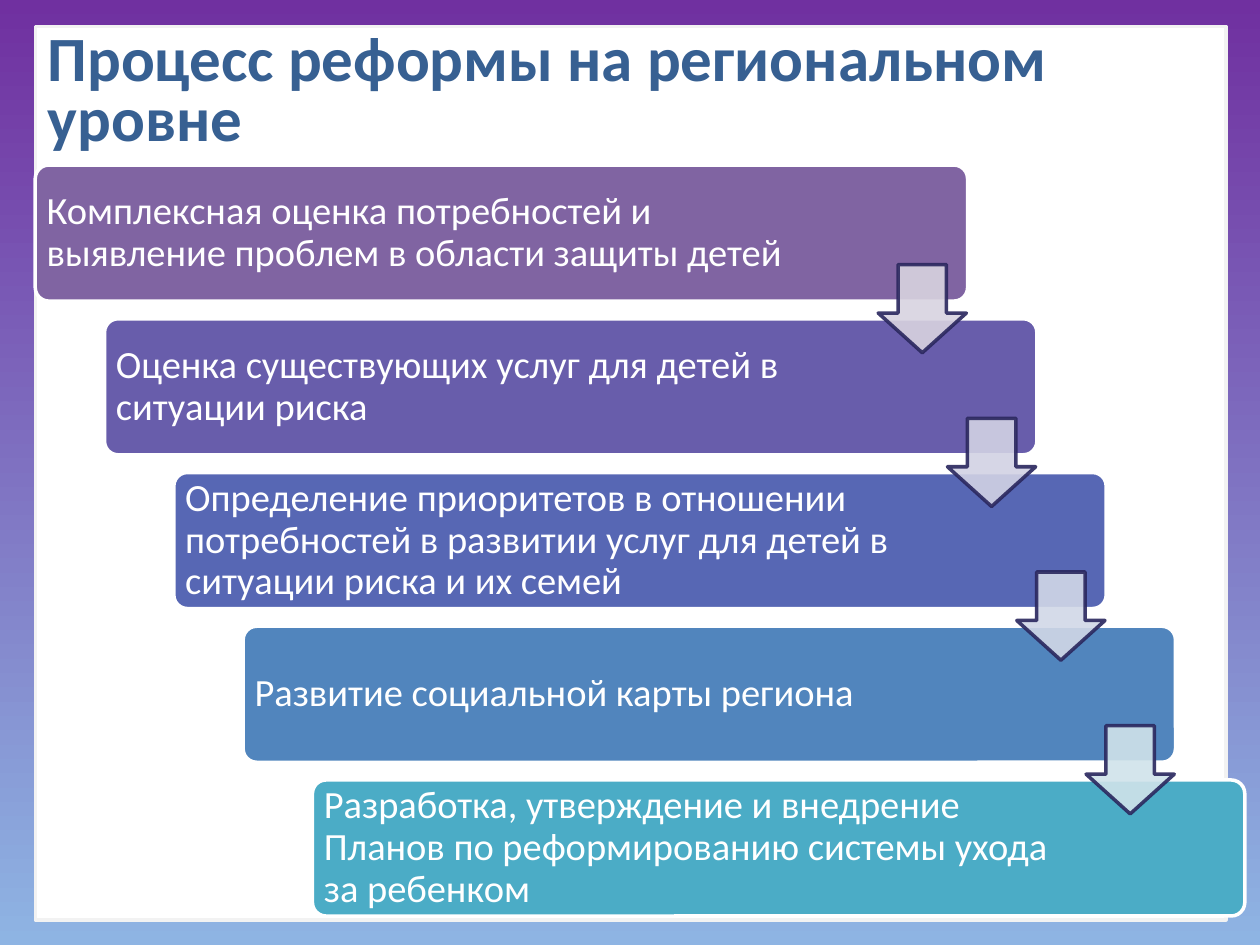
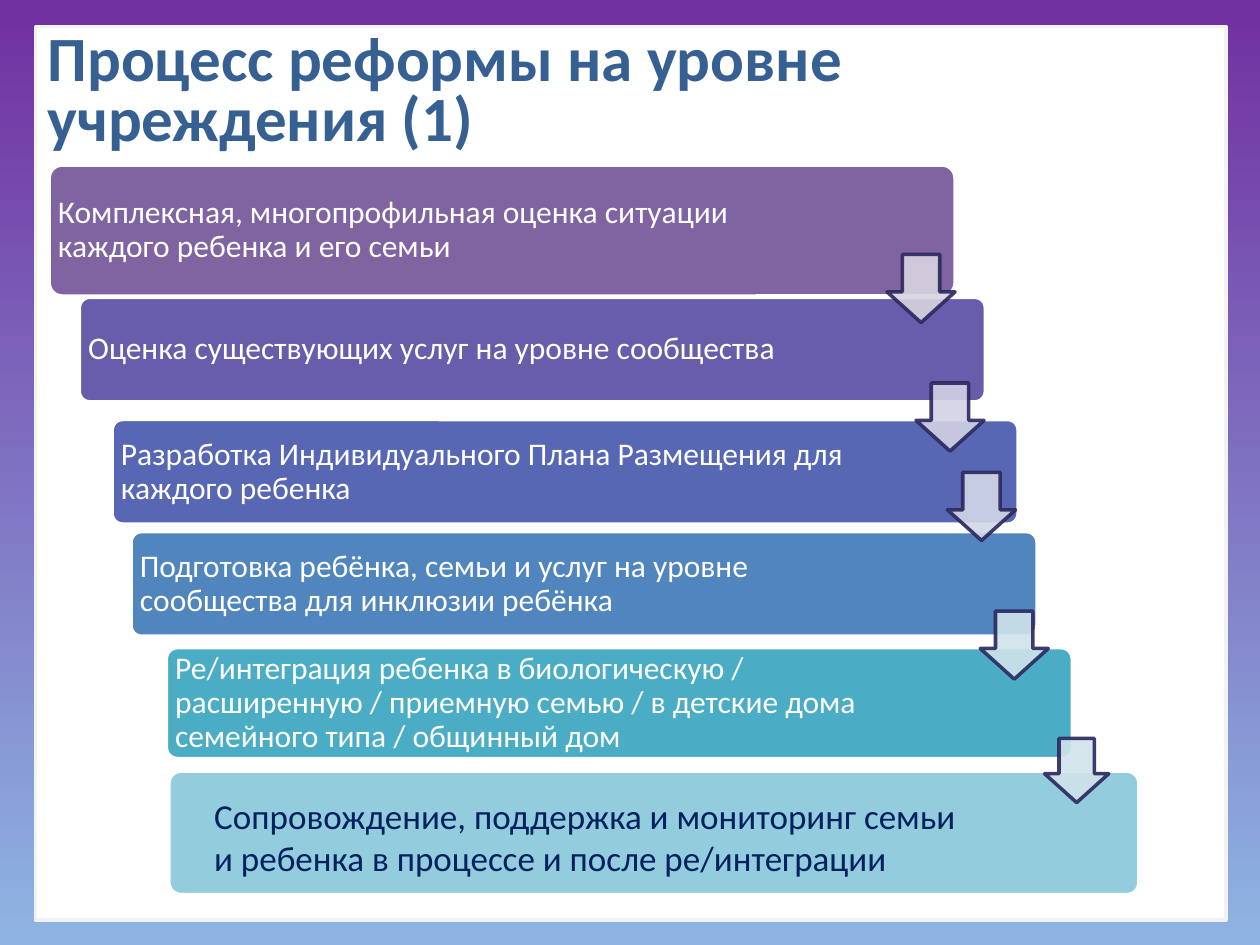
from dataclasses import dataclass

from lxml.etree import SubElement
from pptx import Presentation
from pptx.dml.color import RGBColor
from pptx.enum.shapes import MSO_SHAPE
from pptx.enum.text import MSO_ANCHOR, PP_ALIGN
from pptx.oxml.ns import qn
from pptx.util import Pt

EMU_PER_PX = 9144  # 100 px to the inch


def px(length):
    return length * EMU_PER_PX


@dataclass(frozen=True)
class Theme:
    font: str = "Calibri"
    title_size: int = 36
    region_size: int = 22
    institution_size: int = 18
    follow_up_size: int = 20
    background: tuple = ("7030A0", "8EB4E3")
    panel: str = "FFFFFF"
    panel_line: str = "F2F2F2"
    title: str = "376092"
    bar_text: str = "FFFFFF"
    bar_line: str = "FFFFFF"
    bars: tuple = ("8064A2", "685DAB", "5767B4", "5185BD", "4BACC6")
    follow_up_bar: str = "93CDDD"
    follow_up_text: str = "002060"
    arrows: tuple = ("D8D3E0", "D2D2E4", "D1D8E7", "D0E3EA", "D0E3EA")
    arrow_line: str = "2A275E"
    arrow_opacity: int = 90
    line_width: int = 2


def write(box, text, *, font, size, color, bold=False, spacing=1.0,
          anchor=MSO_ANCHOR.TOP, insets=(10, 5)):
    frame = box.text_frame
    frame.word_wrap = True
    frame.vertical_anchor = anchor
    frame.margin_left = frame.margin_right = px(insets[0])
    frame.margin_top = frame.margin_bottom = px(insets[1])
    para = frame.paragraphs[0]
    para.alignment = PP_ALIGN.LEFT
    para.line_spacing = spacing
    span = para.add_run()
    span.text = text
    span.font.name = font
    span.font.size = Pt(size)
    span.font.bold = bold
    span.font.color.rgb = RGBColor.from_string(color)


class ProcessDeck:
    """Slides that show a process as descending bars joined by arrows."""

    def __init__(self, theme):
        self.theme = theme
        self.deck = Presentation()
        self.deck.slide_width, self.deck.slide_height = px(1000), px(750)
        self.page = None

    def start_page(self, title):
        theme = self.theme
        self.page = self.deck.slides.add_slide(self.deck.slide_layouts[6])
        fill = self.page.background.fill
        fill.gradient()
        fill.gradient_angle = 270
        for stop, color in zip(fill.gradient_stops, theme.background):
            stop.color.rgb = RGBColor.from_string(color)
        self.shape(MSO_SHAPE.RECTANGLE, (28, 21, 945, 709), theme.panel, theme.panel_line)
        self.text((28, 21, 850, 79), title, size=theme.title_size,
                  color=theme.title, bold=True, spacing=0.8)

    def shape(self, kind, area, fill, line, adjustments=()):
        shape = self.page.shapes.add_shape(kind, *map(px, area))
        shape.shadow.inherit = False
        shape.fill.solid()
        shape.fill.fore_color.rgb = RGBColor.from_string(fill)
        shape.line.color.rgb = RGBColor.from_string(line)
        shape.line.width = Pt(self.theme.line_width)
        for index, value in enumerate(adjustments):
            shape.adjustments[index] = value
        return shape

    def text(self, area, text, **style):
        box = self.page.shapes.add_textbox(*map(px, area))
        write(box, text, font=self.theme.font, **style)

    def bar(self, area, fill):
        self.shape(MSO_SHAPE.ROUNDED_RECTANGLE, area, fill, self.theme.bar_line, (0.1,))

    def steps(self, rows, *, width, text_width, size, inset):
        """Draw one labelled bar for each (left, top, height, text) row."""
        for (left, top, height, text), fill in zip(rows, self.theme.bars):
            self.bar((left, top, width, height), fill)
            self.text((left, top, text_width, height), text, size=size,
                      color=self.theme.bar_text, spacing=0.9,
                      anchor=MSO_ANCHOR.MIDDLE, insets=(inset, inset))

    def arrows(self, places):
        """Draw a translucent down arrow at each (left, top, side)."""
        theme = self.theme
        for (left, top, side), fill in zip(places, theme.arrows):
            arrow = self.shape(MSO_SHAPE.DOWN_ARROW, (left, top, side, side), fill,
                               theme.arrow_line, (0.55, 0.45))
            for color in arrow._element.spPr.iter(qn("a:srgbClr")):
                SubElement(color, qn("a:alpha"), val=str(theme.arrow_opacity * 1000))


REGION_STEPS = (
    "Комплексная оценка потребностей и выявление проблем в области защиты детей",
    "Оценка существующих услуг для детей в ситуации риска",
    "Определение приоритетов в отношении потребностей в развитии услуг для детей "
    "в ситуации риска и их семей",
    "Развитие социальной карты региона",
    "Разработка, утверждение и внедрение Планов по реформированию системы ухода за ребенком",
)

INSTITUTION_STEPS = (
    (39, 131, 104, "Комплексная, многопрофильная оценка ситуации каждого ребенка и его семьи"),
    (63, 236, 83, "Оценка существующих услуг на уровне сообщества"),
    (89, 333, 83, "Разработка Индивидуального Плана Размещения для каждого ребенка"),
    (104, 422, 83, "Подготовка ребёнка, семьи и услуг на уровне сообщества для инклюзии ребёнка"),
    (132, 514, 88, "Ре/интеграция ребенка в биологическую / расширенную / приемную семью / "
                   "в детские дома семейного типа / общинный дом"),
)
FOLLOW_UP = ("Сопровождение, поддержка и мониторинг семьи и ребенка "
             "в процессе и после ре/интеграции")
INSTITUTION_ARROWS = ((704, 202, 54), (727, 304, 54), (752, 375, 54),
                      (778, 485, 54), (829, 586, 51))


def add_region_page(slides):
    step_x, step_y = 55, 122
    slides.start_page("Процесс реформы на региональном уровне")
    rows = [(28 + step_x * i, 131 + step_y * i, 108, text)
            for i, text in enumerate(REGION_STEPS)]
    slides.steps(rows, width=740, text_width=615, size=slides.theme.region_size, inset=9)
    slides.arrows([(697 + step_x * i, 210 + step_y * i, 70)
                   for i in range(len(REGION_STEPS) - 1)])


def add_institution_page(slides):
    theme = slides.theme
    slides.start_page("Процесс реформы на уровне учреждения (1)")
    slides.steps(INSTITUTION_STEPS, width=719, text_width=611,
                 size=theme.institution_size, inset=7)
    slides.bar((134, 612, 770, 98), theme.follow_up_bar)
    slides.text((161, 618, 622, 92), FOLLOW_UP, size=theme.follow_up_size,
                color=theme.follow_up_text, anchor=MSO_ANCHOR.MIDDLE, insets=(9, 9))
    slides.arrows(INSTITUTION_ARROWS)


def main():
    slides = ProcessDeck(Theme())
    add_region_page(slides)
    add_institution_page(slides)
    slides.deck.save("out.pptx")


if __name__ == "__main__":
    main()
